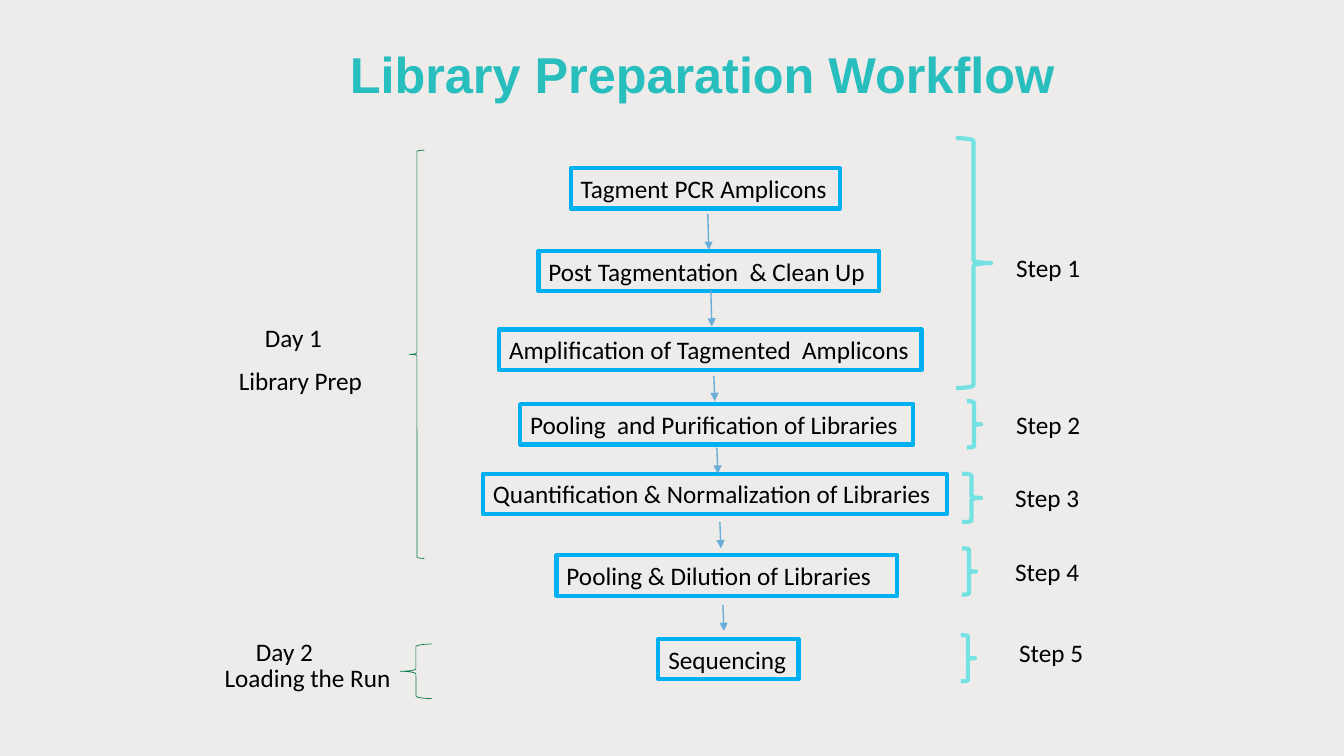
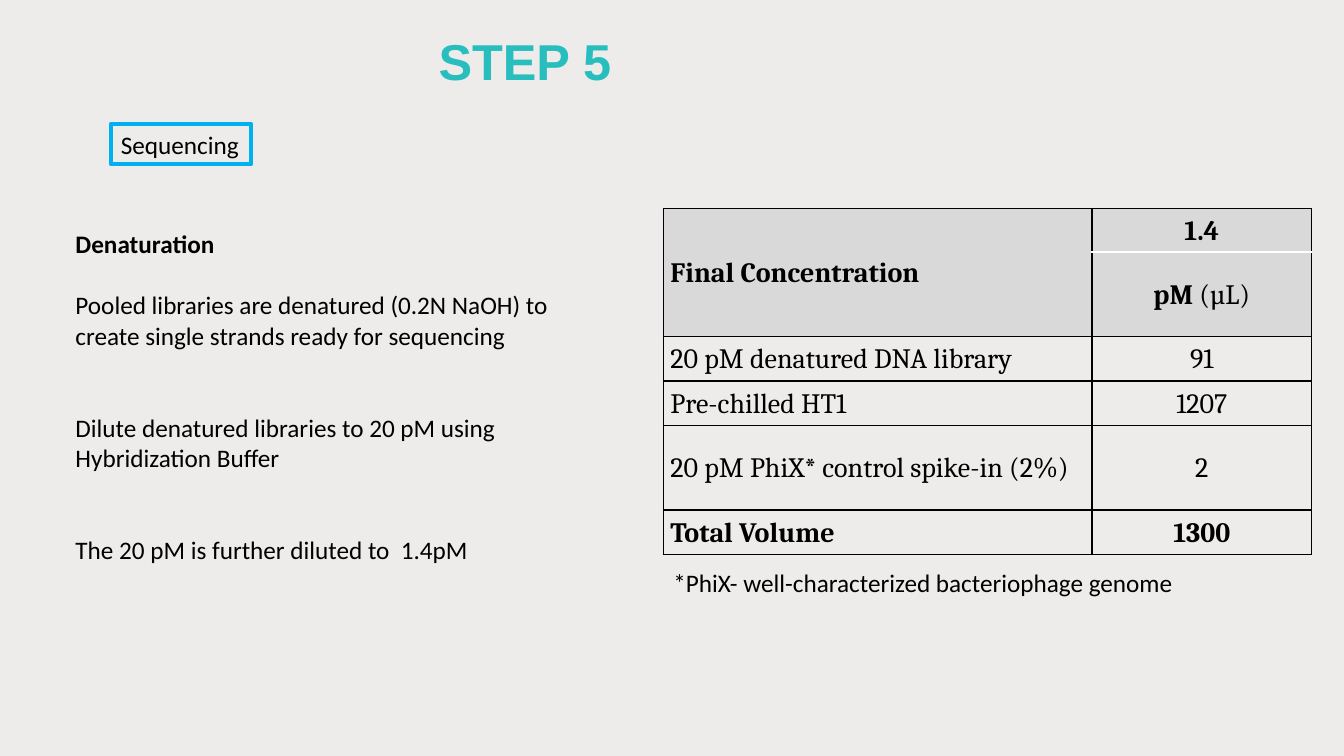
from dataclasses import dataclass

from lxml import etree
from pptx import Presentation
from pptx.dml.color import RGBColor
from pptx.enum.shapes import MSO_CONNECTOR, MSO_SHAPE
from pptx.enum.text import MSO_ANCHOR, MSO_AUTO_SIZE, PP_ALIGN
from pptx.oxml.ns import qn
from pptx.util import Inches, Pt

LEFT, CENTER = PP_ALIGN.LEFT, PP_ALIGN.CENTER
MIDDLE = MSO_ANCHOR.MIDDLE
GROW = MSO_AUTO_SIZE.SHAPE_TO_FIT_TEXT
RECTANGLE = MSO_SHAPE.RECTANGLE
LEFT_BRACE, RIGHT_BRACE = MSO_SHAPE.LEFT_BRACE, MSO_SHAPE.RIGHT_BRACE
STRAIGHT = MSO_CONNECTOR.STRAIGHT

PAGE_WIDTH, PAGE_HEIGHT = 13.33, 7.5
TITLE_ONLY = 5
LINE_HEIGHT = 0.4
PAPER, TEAL, BLACK, HEADER = "EDECEB", "28BEBE", "000000", "D9D9D9"
FRAME, ARROW, STEP, DAY = "00B0F0", "69ADD8", "74E2E2", "05784B"


@dataclass
class Box:
    left: float
    top: float
    width: float
    height: float

    def inner(self, left, top, width, height=LINE_HEIGHT):
        """Box whose corner is measured from this one's corner."""
        return Box(self.left + left, self.top + top, width, height)

    def lengths(self):
        return [Inches(n) for n in (self.left, self.top, self.width, self.height)]


def color(hex_string):
    return RGBColor.from_string(hex_string)


def write(para, *spans, size=18, font="Calibri", bold=False, ink=BLACK,
          align=LEFT, spacing=None, before=0):
    """Add spans to a paragraph; a span is a text or a (text, bold) pair."""
    para.alignment = align
    para.space_before = Pt(before)
    if spacing:
        para.line_spacing = spacing
    for item in spans:
        text, heavy = (item, bold) if isinstance(item, str) else item
        span = para.add_run()
        span.text = text
        span.font.name, span.font.size = font, Pt(size)
        span.font.bold = heavy
        span.font.color.rgb = color(ink)


def add_title(page, text, box):
    title = page.shapes.title
    title.left, title.top, title.width, title.height = box.lengths()
    title.text_frame.vertical_anchor = MIDDLE
    write(title.text_frame.paragraphs[0], text, size=36, font="Arial",
          bold=True, ink=TEAL, spacing=0.9)


def add_label(page, text, box, wrap=False):
    label = page.shapes.add_textbox(*box.lengths())
    label.text_frame.word_wrap = wrap
    label.text_frame.auto_size = GROW
    write(label.text_frame.paragraphs[0], text)


def add_outline(page, kind, box, ink, weight):
    outline = page.shapes.add_shape(kind, *box.lengths())
    outline.shadow.inherit = False
    outline.fill.background()
    outline.line.color.rgb = color(ink)
    outline.line.width = Pt(weight)
    return outline


def add_framed_text(page, text, box):
    frame = add_outline(page, RECTANGLE, box, FRAME, 3).text_frame
    frame.word_wrap = False
    frame.auto_size = GROW
    write(frame.paragraphs[0], text)


def add_arrow(page, box):
    """Draw an arrow from the box's top left to its bottom right."""
    arrow = page.shapes.add_connector(
        STRAIGHT, Inches(box.left), Inches(box.top),
        Inches(box.left + box.width), Inches(box.top + box.height))
    arrow.line.color.rgb = color(ARROW)
    arrow.line.width = Pt(1)
    properties = arrow._element.spPr
    etree.SubElement(properties.find(qn("a:ln")), qn("a:tailEnd"), type="triangle")
    etree.SubElement(properties, qn("a:effectLst"))


def add_workflow(page, box):
    tasks = [
        ("Tagment PCR Amplicons", 0.87, 0, 2.67),
        ("Post Tagmentation  & Clean Up", 0.55, 0.82, 3.38),
        ("Amplification of Tagmented  Amplicons", 0.16, 1.6, 4.19),
        ("Pooling  and Purification of Libraries", 0.37, 2.34, 3.9),
        ("Quantification & Normalization of Libraries", 0, 3.03, 4.6),
        ("Pooling & Dilution of Libraries", 0.73, 3.84, 3.38),
        ("Sequencing", 1.74, 4.67, 1.39),
    ]
    arrows = [(0.45, 0.36), (1.21, 0.36), (2.06, 0.25),
              (2.77, 0.26), (3.51, 0.26), (4.33, 0.26)]
    for text, left, top, width in tasks:
        add_framed_text(page, text, box.inner(left, top, width))
    for index, (top, length) in enumerate(arrows):
        add_arrow(page, box.inner(2.23 + 0.03 * index, top, 0.01, length))


def add_steps(page, box):
    """Draw a brace and a numbered label for each step."""
    braces = [(0, 0, 0.35, 2.48), (0.11, 2.61, 0.14, 0.46),
              (0.06, 3.33, 0.19, 0.48), (0.06, 4.07, 0.14, 0.46),
              (0.05, 4.93, 0.14, 0.46)]
    labels = [(0.5, 1.08), (0.5, 2.64), (0.49, 3.37), (0.49, 4.1), (0.53, 4.9)]
    for number, (brace, (left, top)) in enumerate(zip(braces, labels), 1):
        add_outline(page, RIGHT_BRACE, box.inner(*brace), STEP, 3)
        add_label(page, f"Step {number}", box.inner(left, top, 0.84))


def add_days(page, box):
    days = [
        ("Day 1", (0.4, 1.66), "Library Prep", (0.14, 2.09, 1.44),
         (1.93, 0, 0.15, 4.05)),
        ("Day 2", (0.31, 4.77), "Loading the Run", (0, 5.03, 1.87),
         (1.84, 4.9, 0.31, 0.54)),
    ]
    for day, corner, task, place, brace in days:
        add_outline(page, LEFT_BRACE, box.inner(*brace), DAY, 0.5)
        add_label(page, day, box.inner(*corner, 1.53), wrap=True)
        add_label(page, task, box.inner(*place))


def add_denaturation_text(page, box):
    lines = [
        ("Denaturation", True, 0),
        ("Pooled libraries are denatured (0.2N NaOH) to create single strands "
         "ready for sequencing", False, 22),
        ("Dilute denatured libraries to 20 pM using Hybridization Buffer", False, 44),
        ("The 20 pM is further diluted to  1.4pM", False, 44),
    ]
    frame = page.shapes.add_textbox(*box.lengths()).text_frame
    frame.word_wrap = True
    for index, (text, bold, before) in enumerate(lines):
        para = frame.add_paragraph() if index else frame.paragraphs[0]
        write(para, text, bold=bold, before=before)


def add_borders(cell, sides):
    """Draw black lines on the given sides, a subset of the letters LRTB."""
    properties = cell._tc.get_or_add_tcPr()
    for position, side in enumerate(sides):
        line = etree.Element(qn(f"a:ln{side}"), w=str(Pt(1)))
        fill = etree.SubElement(line, qn("a:solidFill"))
        etree.SubElement(fill, qn("a:srgbClr"), val=BLACK)
        properties.insert(position, line)


def add_concentrations(page, box):
    widths = [4.25, 2.18]
    heights = [0.43, 0.84, 0.44, 0.44, 0.84, 0.44]
    rows = [
        ("Final Concentration", ["1.4"]),
        (None, ["pM ", ("(µL)", False)]),
        ("20 pM denatured DNA library", ["91"]),
        ("Pre-chilled HT1", ["1207"]),
        ("20 pM PhiX* control spike-in (2%)", ["2"]),
        ("Total Volume", ["1300"]),
    ]
    open_sides = {(0, 1): "LRT", (1, 1): "LRB"}
    table = page.shapes.add_table(len(rows), len(widths), *box.lengths()).table
    table.first_row = table.horz_banding = False
    for column, width in zip(table.columns, widths):
        column.width = Inches(width)
    for row, height in zip(table.rows, heights):
        row.height = Inches(height)
    for index, (name, amount) in enumerate(rows):
        in_header = index < 2
        bold = in_header or index == len(rows) - 1
        for column, spans in enumerate(([name] if name else [], amount)):
            cell = table.cell(index, column)
            cell.vertical_anchor = MIDDLE
            cell.margin_left = cell.margin_right = Inches(0.07)
            cell.margin_top = cell.margin_bottom = 0
            if in_header:
                cell.fill.solid()
                cell.fill.fore_color.rgb = color(HEADER)
            else:
                cell.fill.background()
            add_borders(cell, open_sides.get((index, column), "LRTB"))
            write(cell.text_frame.paragraphs[0], *spans, size=20, font="Cambria",
                  bold=bold, align=CENTER if column else LEFT, spacing=1.07)
    table.cell(0, 0).merge(table.cell(1, 0))


def add_page(deck, title, left, top):
    page = deck.slides.add_slide(deck.slide_layouts[TITLE_ONLY])
    add_title(page, title, Box(left, top, PAGE_WIDTH - left, 1.14))
    return page


def add_workflow_page(deck):
    page = add_page(deck, "Library Preparation Workflow", 3.37, 0.2)
    add_workflow(page, Box(4.79, 1.67, 4.6, 5.07))
    add_steps(page, Box(9.48, 1.37, 1.37, 5.39))
    add_days(page, Box(2.13, 1.49, 2.15, 5.44))


def add_sequencing_page(deck):
    page = add_page(deck, "STEP 5", 4.25, 0.07)
    add_framed_text(page, "Sequencing", Box(1.1, 1.23, 1.39, LINE_HEIGHT))
    add_denaturation_text(page, Box(0.65, 2.22, 5.29, 3.43))
    add_concentrations(page, Box(6.58, 2.07, 6.43, 3.43))
    add_label(page, "*PhiX- well-characterized bacteriophage genome",
              Box(6.58, 5.58, 5.28, LINE_HEIGHT))


def main():
    deck = Presentation()
    deck.slide_width, deck.slide_height = Inches(PAGE_WIDTH), Inches(PAGE_HEIGHT)
    backdrop = deck.slide_master.background.fill
    backdrop.solid()
    backdrop.fore_color.rgb = color(PAPER)
    add_workflow_page(deck)
    add_sequencing_page(deck)
    deck.save("out.pptx")


if __name__ == "__main__":
    main()
